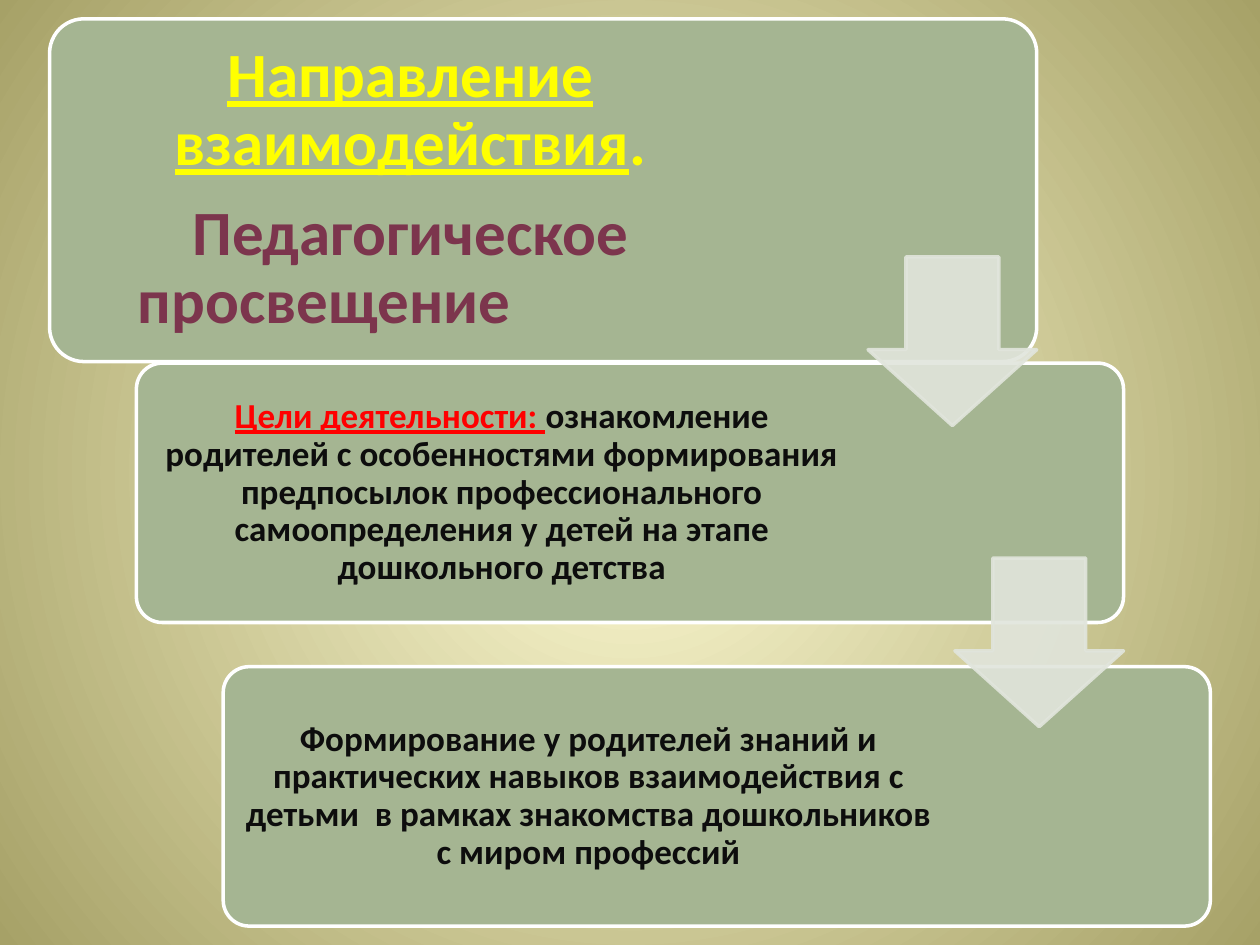
from lxml import etree
from pptx import Presentation, util as u
from pptx.dml.color import RGBColor
from pptx.enum import shapes, text
from pptx.oxml.ns import qn

Cm, Pt = u.Cm, u.Pt
hues = {
    "glow": "FFFCD4", "edge": "A6A167", "card": "A5B592", "white": "FFFFFF",
    "arrow": "E1E5DC", "head": "FFFF00", "theme": "7C354D", "goal": "FF0000",
    "ink": "0D0D0D",
}


def paint(shape, fill, line, alpha=None):
    shape.shadow.inherit = False
    shape.fill.solid()
    shape.fill.fore_color.rgb = RGBColor.from_string(hues[fill])
    shape.line.color.rgb = RGBColor.from_string(hues[line])
    shape.line.width = Pt(2)
    if alpha:
        for tint in shape.element.spPr.iter(qn("a:srgbClr")):
            etree.SubElement(tint, qn("a:alpha")).set("val", str(alpha * 1000))


def write(para, words, size=20, hue="ink", under=False):
    run = para.add_run()
    run.text = words
    run.font.name = "Calibri"
    run.font.size = Pt(size)
    run.font.bold = True
    run.font.underline = under
    run.font.color.rgb = RGBColor.from_string(hues[hue])


deck = Presentation()
deck.slide_width, deck.slide_height = Cm(25.4), Cm(19.05)
slide = deck.slides.add_slide(deck.slide_layouts[6])

back = slide.background.fill
back.gradient()
for stop, hue in zip(back.gradient_stops, ("glow", "edge")):
    stop.color.rgb = RGBColor.from_string(hues[hue])
grad = next(slide.element.iter(qn("a:gradFill")))
grad.remove(grad.find(qn("a:lin")))
ring = etree.SubElement(grad, qn("a:path"), {"path": "circle"})
etree.SubElement(ring, qn("a:fillToRect"), dict.fromkeys("ltrb", "50000"))

left, step, wide = 1, 1.75, 19.9
cards = [
    (0.38, 6.91, 0.2, 14.15, 0.38, 12.6, [
        [("Направление взаимодействия", dict(size=36, hue="head", under=True)),
         (".", dict(size=36, hue="head"))],
        [("Педагогическое просвещение", dict(size=36, hue="theme"))],
    ]),
    (7.32, 5.23, 0.15, 14.43, 0.2, 7, [
        [("Цели деятельности: ", dict(hue="goal", under=True)),
         ("ознакомление родителей с особенностями формирования предпосылок "
          "профессионального самоопределения у детей на этапе дошкольного детства", {})],
    ]),
    (13.44, 5.23, 0.15, 14.43, 0.2, 7, [
        [("Формирование у родителей знаний и практических навыков взаимодействия "
          "с детьми  в рамках знакомства дошкольников с миром профессий", {})],
    ]),
]

for i, (top, high, gap, span, inset, after, paras) in enumerate(cards):
    x = left + i * step
    card = slide.shapes.add_shape(
        shapes.MSO_SHAPE.ROUNDED_RECTANGLE, Cm(x), Cm(top), Cm(wide), Cm(high))
    card.adjustments[0] = 0.1
    paint(card, "card", "white")
    box = slide.shapes.add_textbox(
        Cm(x + gap), Cm(top + gap), Cm(span), Cm(high - 2 * gap))
    frame = box.text_frame
    frame.word_wrap = True
    frame.vertical_anchor = text.MSO_ANCHOR.MIDDLE
    frame.margin_left = frame.margin_right = Cm(inset)
    frame.margin_top = frame.margin_bottom = Cm(inset)
    for n, runs in enumerate(paras):
        para = frame.add_paragraph() if n else frame.paragraphs[0]
        para.alignment = text.PP_ALIGN.CENTER
        para.line_spacing = 0.9
        para.space_after = Pt(after)
        for words, form in runs:
            write(para, words, **form)
        if n:
            para.alignment = text.PP_ALIGN.LEFT
            props = para._p.get_or_add_pPr()
            props.set("marL", str(Cm(1.2)))
            props.set("indent", str(Cm(1.1)))

size = 3.4
for i, top in enumerate((5.18, 11.25)):
    arrow = slide.shapes.add_shape(
        shapes.MSO_SHAPE.DOWN_ARROW, Cm(left + i * step + wide - size), Cm(top),
        Cm(size), Cm(size))
    arrow.adjustments[0], arrow.adjustments[1] = 0.55, 0.45
    paint(arrow, "arrow", "arrow", alpha=90)

deck.save("out.pptx")
